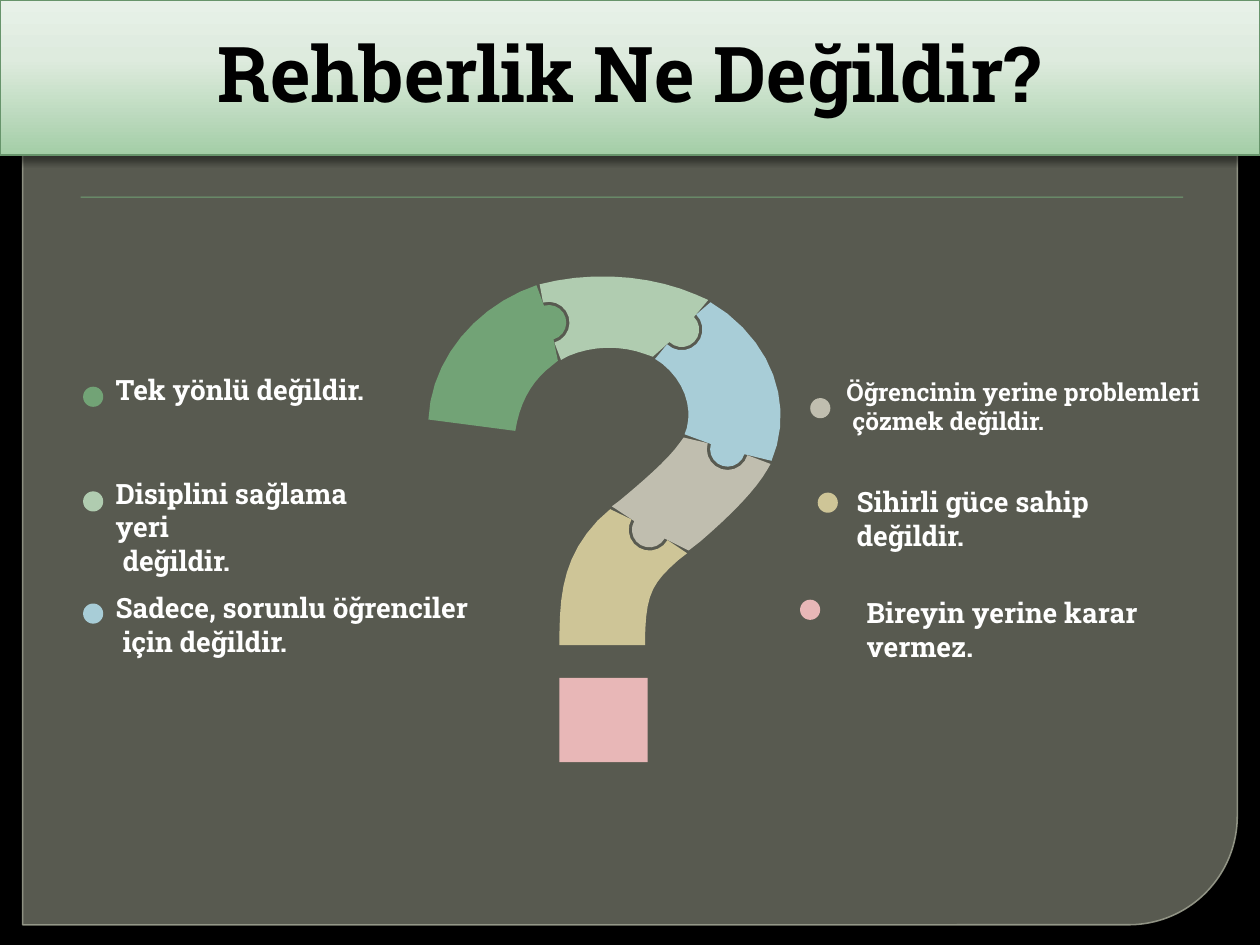
from copy import deepcopy
from math import cos, hypot, pi, sin

from lxml import etree
from pptx import Presentation
from pptx.dml.color import RGBColor
from pptx.enum.shapes import MSO_SHAPE
from pptx.enum.text import MSO_ANCHOR, MSO_AUTO_SIZE, PP_ALIGN
from pptx.oxml.ns import qn
from pptx.util import Pt

RECT, OVAL = MSO_SHAPE.RECTANGLE, MSO_SHAPE.OVAL
DIAGONAL = MSO_SHAPE.ROUND_2_DIAG_RECTANGLE
LEFT, CENTER = PP_ALIGN.LEFT, PP_ALIGN.CENTER
TOP, MIDDLE = MSO_ANCHOR.TOP, MSO_ANCHOR.MIDDLE
FIT = MSO_AUTO_SIZE.SHAPE_TO_FIT_TEXT

FONT = "Roboto Slab"
BLACK = RGBColor.from_string("000000")
WHITE = RGBColor.from_string("FFFFFF")
GREEN = RGBColor.from_string("72A376")
MINT = RGBColor.from_string("B0CCB0")
BLUE = RGBColor.from_string("A8CDD7")
GREY = RGBColor.from_string("C0BEAF")
SAND = RGBColor.from_string("CEC597")
PINK = RGBColor.from_string("E8B7B7")
PANEL = RGBColor.from_string("888B7B")
PANEL_EDGE = RGBColor.from_string("9DA090")
TITLE_EDGE = RGBColor.from_string("67946B")
TITLE_STOPS = [(0, RGBColor.from_string("A4CEA7")),
               (0.62, RGBColor.from_string("DEEBDE")),
               (1, RGBColor.from_string("E7F1E8"))]

TITLE = "Rehberlik Ne Değildir?"
DOT = 11.52
LEFT_DOT, LEFT_TEXT, RIGHT_EDGE = 47.52, 59.04, 693.6
# colour, dot top, text top, text width, paragraphs
LEFT_POINTS = [
    (GREEN, 221, 209.5, 157.7, ["Tek yönlü değildir."]),
    (MINT, 280.8, 268.6, 177.8, ["Disiplini sağlama yeri", " değildir."]),
    (BLUE, 344.9, 334, 218.2, ["Sadece, sorunlu öğrenciler", " için değildir."]),
]
# colour, dot left, dot top, text left, text top, size, paragraphs
RIGHT_POINTS = [
    (GREY, 463, 227.5, 476.6, 211.7, 14,
     ["Öğrencinin yerine problemleri", " çözmek değildir."]),
    (SAND, 467.3, 281.5, 482.4, 273.6, 16, ["Sihirli güce sahip değildir."]),
    (PINK, 457.2, 342.7, 488.2, 337, 16, ["Bireyin yerine karar vermez."]),
]

# The question mark lies between two rails on a grid of 0.72 pt. Each rail
# has a start, then one Bezier curve (two controls, end) for each piece.
GRID = 0.72
PIECES = [GREEN, MINT, BLUE, GREY, SAND]
OUTER = [(340, 333),
         ((342, 285), (378, 242), (427, 226)),
         ((475, 213), (528, 220), (563, 239)),
         ((614, 270), (631, 322), (612, 367)),
         ((604, 385), (580, 410), (546, 438)),
         ((518, 462), (512, 468), (512, 512))]
INNER = [(409, 342),
         ((413, 316), (425, 298), (444, 286)),
         ((467, 273), (497, 273), (519, 284)),
         ((543, 299), (552, 325), (543, 346)),
         ((534, 363), (504, 387), (485, 403)),
         ((446, 437), (444, 470), (444, 512))]
KNOB, HALF_GAP, STEPS = 15.2, 1.3, 10


def set_alpha(part, percent):
    color = next(part.iter(qn("a:srgbClr")))
    etree.SubElement(color, qn("a:alpha"), val=str(percent * 1000))


def paint(shape, fill=None, line=None, width=0.75):
    shape.shadow.inherit = False
    if fill is not None:
        shape.fill.solid()
        shape.fill.fore_color.rgb = fill
    if line is None:
        shape.line.fill.background()
    else:
        shape.line.color.rgb = line
        shape.line.width = Pt(width)
    return shape


def add_shape(kind, box, **look):
    return paint(s.shapes.add_shape(kind, *map(Pt, box)), **look)


def add_shadow(shape, alpha, blur, distance):
    """Add a black shadow that falls straight down."""
    effects = shape._element.spPr.find(qn("a:effectLst"))
    shadow = etree.SubElement(effects, qn("a:outerShdw"), blurRad=str(Pt(blur)),
                              dist=str(Pt(distance)), dir="5400000",
                              algn="t", rotWithShape="0")
    etree.SubElement(shadow, qn("a:srgbClr"), val=str(BLACK))
    set_alpha(shadow, alpha)


def write(shape, paragraphs, size=16, color=WHITE, align=LEFT, anchor=TOP,
          spacing=None):
    tf = shape.text_frame
    tf.word_wrap = True
    tf.vertical_anchor = anchor
    for i, text in enumerate(paragraphs):
        p = tf.add_paragraph() if i else tf.paragraphs[0]
        p.alignment = align
        p.line_spacing = spacing
        r = p.add_run()
        r.text = text
        r.font.name, r.font.size, r.font.bold = FONT, Pt(size), True
        r.font.color.rgb = color
    return tf


def add_point(color, dot, corner, width, paragraphs, size=16):
    add_shape(OVAL, (*dot, DOT, DOT), fill=color)
    height = 7.2 + 1.2 * size * len(paragraphs)
    box = s.shapes.add_textbox(*map(Pt, (*corner, width, height)))
    write(box, paragraphs, size).auto_size = FIT


def rail_points(rail, i):
    """Sample the curve of a rail that belongs to piece i."""
    start = rail[i][-1] if i else rail[0]
    for k in range(1, STEPS):
        t = k / STEPS
        u = 1 - t
        yield tuple(u**3 * a + 3 * u * u * t * b + 3 * u * t * t * c + t**3 * d
                    for a, b, c, d in zip(start, *rail[i + 1]))


def joint_points(i, side):
    """Points from outer to inner rail; side is -1 before the gap, 1 after."""
    if i == 0:
        return [OUTER[0], INNER[0]]
    (ox, oy), (ix, iy) = OUTER[i][-1], INNER[i][-1]
    if i == len(PIECES):
        return [(ox, oy), (ix, iy)]
    length = hypot(ix - ox, iy - oy)
    dx, dy = (ix - ox) / length, (iy - oy) / length
    shift_x, shift_y = side * HALF_GAP * dy, -side * HALF_GAP * dx
    radius = KNOB + side * HALF_GAP
    knob = []
    for k in range(STEPS + 1):
        along = -radius * cos(pi * k / STEPS)
        ahead = radius * sin(pi * k / STEPS)
        knob.append(((ox + ix) / 2 + along * dx + ahead * dy,
                     (oy + iy) / 2 + along * dy - ahead * dx))
    return [(ox + shift_x, oy + shift_y), *knob, (ix + shift_x, iy + shift_y)]


prs = Presentation()
prs.slide_width, prs.slide_height = Pt(720), Pt(540)
s = prs.slides.add_slide(prs.slide_layouts[6])
s.background.fill.solid()
s.background.fill.fore_color.rgb = BLACK

panel = add_shape(DIAGONAL, (12.96, 11.52, 694.08, 516.96),
                  fill=PANEL, line=PANEL_EDGE, width=0.87)
panel.adjustments[0], panel.adjustments[1] = 0.12, 0
set_alpha(panel._element.spPr.find(qn("a:solidFill")), 65)
set_alpha(panel._element.spPr.find(qn("a:ln")), 88)
rule = add_shape(RECT, (46.08, 112.32, 630, 0.72), fill=GREEN)
add_shadow(rule, 75, 1, 1)

for i, color in enumerate(PIECES):
    outline = [*rail_points(OUTER, i), *joint_points(i + 1, -1),
               *reversed(list(rail_points(INNER, i))),
               *reversed(joint_points(i, 1))]
    first, *rest = [(Pt(x * GRID), Pt(y * GRID)) for x, y in outline]
    builder = s.shapes.build_freeform(*first)
    builder.add_line_segments(rest, close=True)
    paint(builder.convert_to_shape(), fill=color)
add_shape(RECT, (319.68, 387.36, 50.4, 48.24), fill=PINK)

for color, dot_y, y, width, paragraphs in LEFT_POINTS:
    add_point(color, (LEFT_DOT, dot_y), (LEFT_TEXT, y), width, paragraphs)
for color, dot_x, dot_y, x, y, size, paragraphs in RIGHT_POINTS:
    add_point(color, (dot_x, dot_y), (x, y), RIGHT_EDGE - x, paragraphs, size)

title = add_shape(RECT, (0, 0, 720, 88.56), line=TITLE_EDGE)
title.fill.gradient()
title.fill.gradient_angle = 90
stops = next(title._element.spPr.iter(qn("a:gsLst")))
stops.append(deepcopy(stops[0]))
for stop, (position, color) in zip(title.fill.gradient_stops, TITLE_STOPS):
    stop.position = position
    stop.color.rgb = color
add_shadow(title, 43, 4, 3)
write(title, [TITLE], 44, color=BLACK, align=CENTER, anchor=MIDDLE, spacing=0.9)

prs.save("out.pptx")
